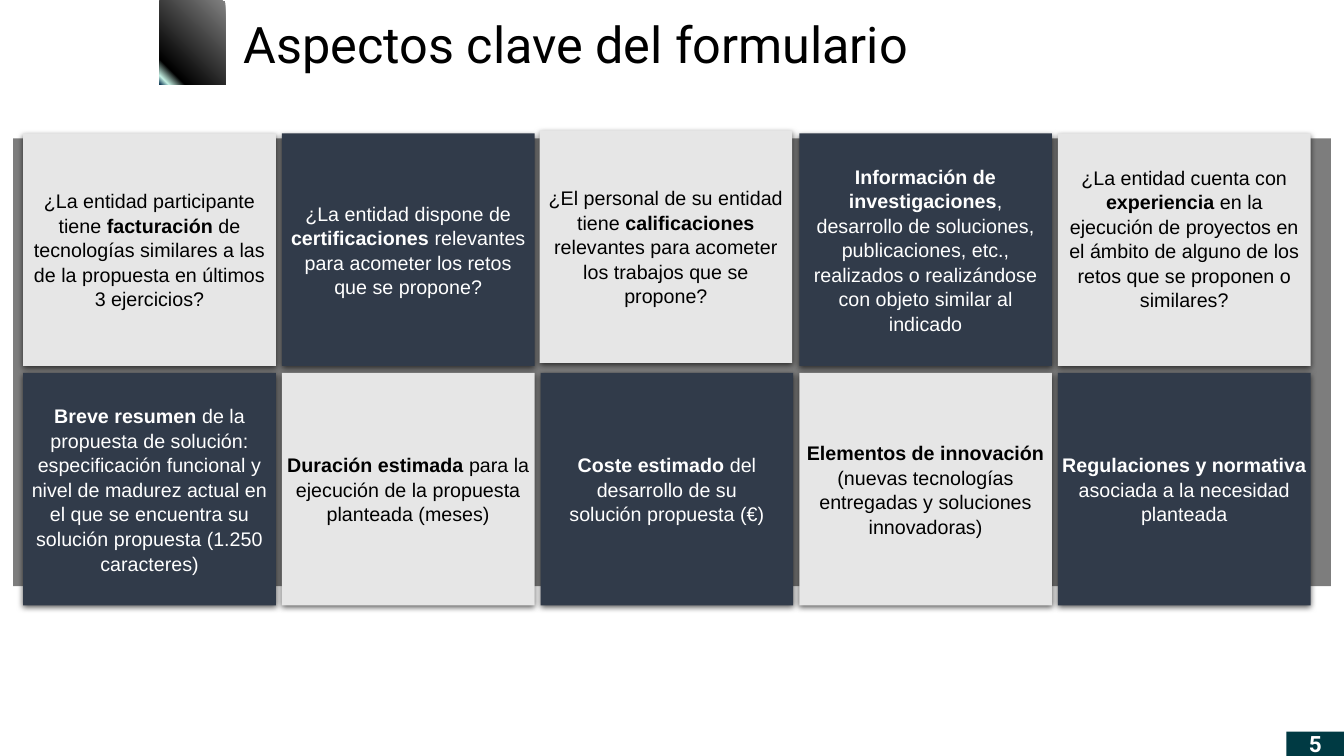
from dataclasses import dataclass

from lxml.etree import SubElement
from pptx import Presentation
from pptx.dml.color import RGBColor
from pptx.enum.shapes import MSO_SHAPE
from pptx.enum.text import MSO_ANCHOR, MSO_AUTO_SIZE, PP_ALIGN
from pptx.oxml.ns import qn
from pptx.util import Inches, Pt


@dataclass(frozen=True)
class Theme:
    black: str = "000000"
    white: str = "FFFFFF"
    light: str = "E6E6E6"
    dark: str = "313B4A"
    teal: str = "003A43"
    accent_stops: tuple = ((0, "808080"), (83, "000000"), (94, "C8F5E8"), (100, "0F3754"))
    title_font: str = "Roboto"
    card_font: str = "Arial"
    title_size: float = 35.9
    card_size: float = 14
    number_size: float = 16


@dataclass(frozen=True)
class Card:
    paragraphs: tuple
    shift_left: float = 0
    shift_top: float = 0
    bottom_inset: float = 0.04


THEME = Theme()
COLUMNS = 5
CARD_LEFT, CARD_TOP = 0.23, 1.32
CARD_WIDTH, CARD_HEIGHT = 2.5, 2.3
COLUMN_PITCH, ROW_PITCH = 2.56, 2.37

CARDS = (
    Card(((("¿La entidad participante tiene ", False), ("facturación", True),
           (" de tecnologías similares a las de la propuesta en últimos 3 ejercicios?", False)),)),
    Card(((("¿La entidad dispone de ", False), ("certificaciones", True),
           (" relevantes para acometer los retos que se propone?", False)),)),
    Card(((("¿El personal de su entidad tiene ", False), ("calificaciones ", True),
           ("relevantes para acometer los trabajos que se propone?", False)),),
         shift_left=-0.01, shift_top=-0.03),
    Card(((("Información de investigaciones", True),
           (", desarrollo de soluciones, publicaciones, etc., realizados o realizándose "
            "con objeto similar al indicado", False)),)),
    Card(((("¿La entidad cuenta con ", False), ("experiencia", True),
           (" en la ejecución de proyectos en el ámbito de alguno de los retos que "
            "se proponen o similares?", False)),), bottom_inset=0.27),
    Card(((("Breve resumen ", True),
           ("de la propuesta de solución: especificación funcional y nivel de madurez actual "
            "en el que se encuentra su solución propuesta (1.250 caracteres)", False)),)),
    Card(((("Duración estimada ", True),
           ("para la ejecución de la propuesta planteada (meses)", False)),)),
    Card(((("Coste estimado ", True), ("del desarrollo de su", False)),
          (("solución propuesta (€)", False),))),
    Card(((("Elementos de innovación ", True),
           ("(nuevas tecnologías entregadas y soluciones innovadoras)", False)),)),
    Card(((("Regulaciones y normativa", True),
           (" asociada a la necesidad planteada", False)),)),
)


def add_run(paragraph, text, font_name, size, color, bold=False):
    run = paragraph.add_run()
    run.text = text
    run.font.name = font_name
    run.font.size = Pt(size)
    run.font.bold = bold
    run.font.color.rgb = RGBColor.from_string(color)


def add_rectangle(slide, left, top, width, height, color):
    shape = slide.shapes.add_shape(
        MSO_SHAPE.RECTANGLE, Inches(left), Inches(top), Inches(width), Inches(height))
    shape.shadow.inherit = False
    shape.fill.solid()
    shape.fill.fore_color.rgb = RGBColor.from_string(color)
    shape.line.fill.background()
    return shape


def set_frame(shape, inset, bottom_inset):
    frame = shape.text_frame
    frame.word_wrap = True
    frame.vertical_anchor = MSO_ANCHOR.MIDDLE
    frame.margin_left = frame.margin_right = frame.margin_top = Inches(inset)
    frame.margin_bottom = Inches(bottom_inset)
    return frame


def add_alpha(color_element, percent):
    SubElement(color_element, qn("a:alpha"), val=str(percent * 1000))


def add_shadow(shape):
    effects = shape._element.spPr.find(qn("a:effectLst"))
    shadow = SubElement(effects, qn("a:outerShdw"), blurRad=str(Pt(4.5)), dist=str(Pt(1.5)),
                        dir="5400000", algn="ctr", rotWithShape="0")
    add_alpha(SubElement(shadow, qn("a:srgbClr"), val=THEME.black), 63)


def add_title(slide, text):
    title = slide.shapes.title
    title.left, title.top = Inches(2.31), Inches(0.08)
    title.width, title.height = Inches(6.86), Inches(0.71)
    frame = title.text_frame
    frame.word_wrap = False
    frame.auto_size = MSO_AUTO_SIZE.NONE
    frame.vertical_anchor = MSO_ANCHOR.TOP
    paragraph = frame.paragraphs[0]
    paragraph.alignment = PP_ALIGN.LEFT
    add_run(paragraph, text, THEME.title_font, THEME.title_size, THEME.black)


def add_panel(slide):
    panel = add_rectangle(slide, 0.13, 1.37, 13.04, 4.43, THEME.black)
    add_alpha(panel._element.spPr.find(qn("a:solidFill"))[0], 51)


def add_card(slide, index, card):
    row, column = divmod(index, COLUMNS)
    is_light = index % 2 == 0
    shape = add_rectangle(
        slide,
        CARD_LEFT + column * COLUMN_PITCH + card.shift_left,
        CARD_TOP + row * ROW_PITCH + card.shift_top,
        CARD_WIDTH, CARD_HEIGHT, THEME.light if is_light else THEME.dark)
    add_shadow(shape)
    frame = set_frame(shape, 0.04, card.bottom_inset)
    for position, runs in enumerate(card.paragraphs):
        paragraph = frame.add_paragraph() if position else frame.paragraphs[0]
        paragraph.alignment = PP_ALIGN.CENTER
        paragraph.line_spacing = 1.04
        for text, bold in runs:
            add_run(paragraph, text, THEME.card_font, THEME.card_size,
                    THEME.black if is_light else THEME.white, bold)


def add_accent(slide):
    accent = add_rectangle(slide, 1.58, 0.01, 0.65, 0.83, THEME.black)
    accent.fill.gradient()
    gradient = accent._element.spPr.find(qn("a:gradFill"))
    stops = gradient.find(qn("a:gsLst"))
    for stop in list(stops):
        stops.remove(stop)
    for percent, color in THEME.accent_stops:
        stop = SubElement(stops, qn("a:gs"), pos=str(percent * 1000))
        SubElement(stop, qn("a:srgbClr"), val=color)
    gradient.find(qn("a:lin")).set("ang", str(135 * 60000))


def add_slide_number(slide, number):
    shape = add_rectangle(slide, 12.73, 7.24, 0.57, 0.24, THEME.teal)
    paragraph = set_frame(shape, 0.13, 0.13).paragraphs[0]
    paragraph.alignment = PP_ALIGN.CENTER
    add_run(paragraph, number, THEME.title_font, THEME.number_size, THEME.white, True)


def main():
    presentation = Presentation()
    presentation.slide_width = Inches(13.3)
    presentation.slide_height = Inches(7.48)
    slide = presentation.slides.add_slide(presentation.slide_layouts[5])
    add_title(slide, "Aspectos clave del formulario")
    add_panel(slide)
    for index, card in enumerate(CARDS):
        add_card(slide, index, card)
    add_accent(slide)
    add_slide_number(slide, "5")
    presentation.save("out.pptx")


if __name__ == "__main__":
    main()
